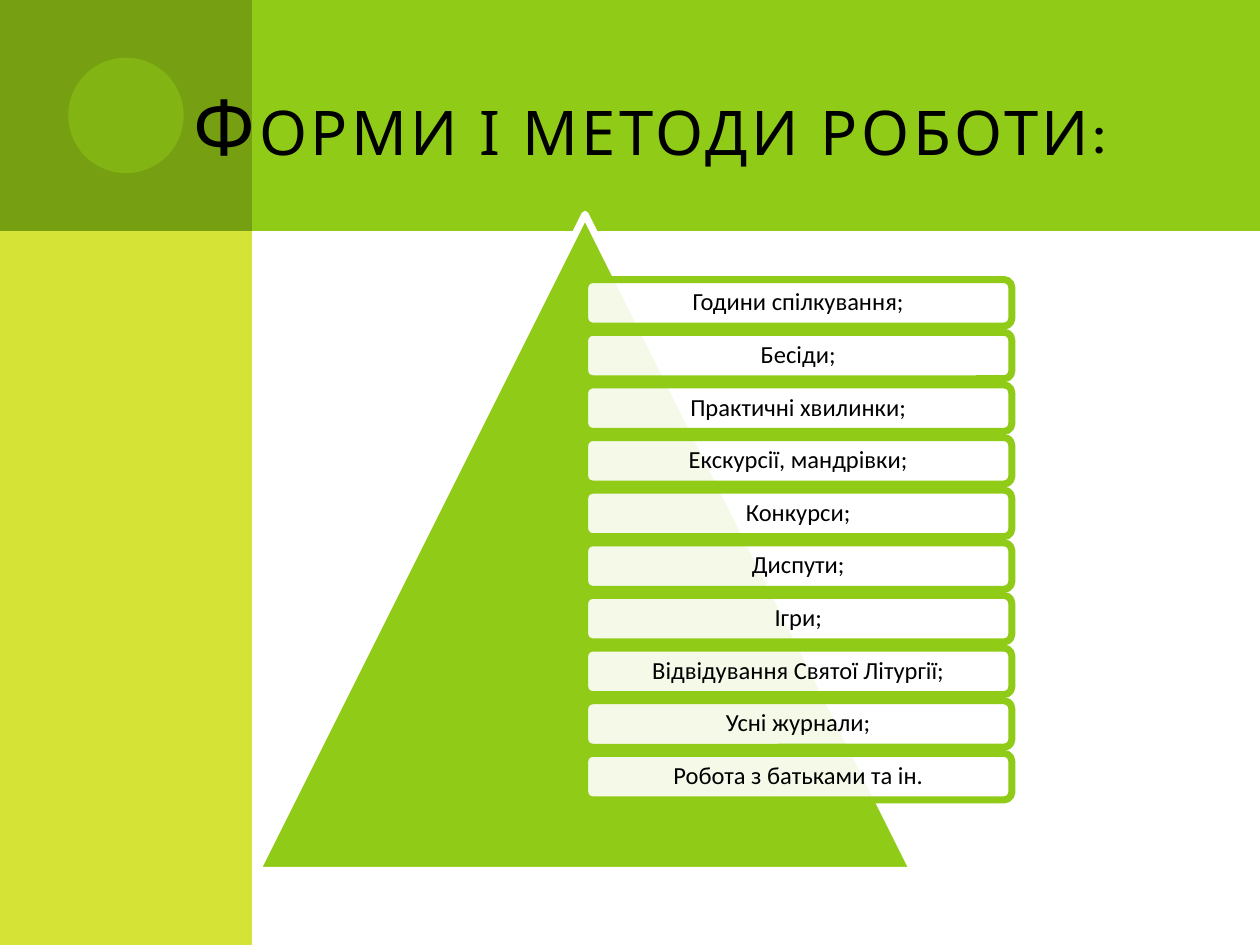
from dataclasses import dataclass

import lxml.etree
import pptx
import pptx.dml.color
import pptx.enum.shapes
import pptx.enum.text
import pptx.oxml.ns
import pptx.util

Pt = pptx.util.Pt
Shape = pptx.enum.shapes.MSO_SHAPE
Align = pptx.enum.text.PP_ALIGN


@dataclass(frozen=True)
class Theme:
    green: str = "8FCB17"
    dark_green: str = "769F11"
    lime: str = "D4E336"
    white: str = "FFFFFF"
    black: str = "000000"
    title_font: str = "Karla"
    body_font: str = "Calibri"
    title_size: int = 44
    body_size: int = 14
    outline: int = 4


THEME = Theme()
TITLE = "Форми і методи роботи:"
METHODS = [
    "Години спілкування;",
    "Бесіди;",
    "Практичні хвилинки;",
    "Екскурсії, мандрівки;",
    "Конкурси;",
    "Диспути;",
    "Ігри;",
    "Відвідування Святої Літургії;",
    "Усні журнали;",
    "Робота з батьками та ін.",
]
FIRST_METHOD_TOP = 159.8
METHOD_PITCH = 30.08


def rgb(color):
    return pptx.dml.color.RGBColor.from_string(color)


def add_child(parent, tag, **attributes):
    return lxml.etree.SubElement(parent, pptx.oxml.ns.qn(tag), **attributes)


def add_figure(page, kind, bounds, fill, opacity=100, line=None):
    figure = page.shapes.add_shape(kind, *map(Pt, bounds))
    figure.shadow.inherit = False
    figure.fill.solid()
    figure.fill.fore_color.rgb = rgb(fill)
    if opacity < 100:
        color = figure.fill._xPr.find(".//" + pptx.oxml.ns.qn("a:srgbClr"))
        add_child(color, "a:alpha", val=str(opacity * 1000))
    if line:
        figure.line.color.rgb = rgb(line)
        figure.line.width = Pt(THEME.outline)
        add_child(figure.line._get_or_add_ln(), "a:round")
    else:
        figure.line.fill.background()
    return figure


def write_text(shape, text, font, size, alignment):
    frame = shape.text_frame
    frame.word_wrap = True
    frame.vertical_anchor = pptx.enum.text.MSO_ANCHOR.MIDDLE
    para = frame.paragraphs[0]
    span = para.add_run()
    span.text = text
    para.alignment = alignment
    para.font.name = font
    para.font.size = Pt(size)
    para.font.color.rgb = rgb(THEME.black)
    return para


def add_background(page):
    add_figure(page, Shape.RECTANGLE, (36, 0, 684, 132), THEME.green)
    add_figure(page, Shape.RECTANGLE, (0, 0, 144, 540), THEME.lime)
    add_figure(page, Shape.RECTANGLE, (0, 0, 144, 132), THEME.dark_green)
    add_figure(page, Shape.OVAL, (39, 33, 66, 66), THEME.green, opacity=50)


def add_title(page):
    box = page.shapes.add_textbox(*map(Pt, (36, 37.5, 648, 67.5)))
    para = write_text(box, TITLE, THEME.title_font, THEME.title_size, Align.RIGHT)
    properties = para.runs[0].font._element
    properties.set("cap", "small")
    properties.set("spc", "200")


def add_method(page, text, top):
    bounds = (334.1, top, 244.1, 26.6)
    box = add_figure(page, Shape.ROUNDED_RECTANGLE, bounds, THEME.white, 90, THEME.green)
    frame = box.text_frame
    frame.margin_left = frame.margin_right = Pt(6)
    frame.margin_top = frame.margin_bottom = Pt(4)
    para = write_text(box, text, THEME.body_font, THEME.body_size, Align.CENTER)
    para.line_spacing = 0.9


def main():
    deck = pptx.Presentation()
    deck.slide_width, deck.slide_height = Pt(720), Pt(540)
    page = deck.slides.add_slide(deck.slide_layouts[6])
    add_background(page)
    add_title(page)
    add_figure(page, Shape.ISOSCELES_TRIANGLE, (146.8, 122.4, 375, 375),
               THEME.green, line=THEME.white)
    for index, text in enumerate(METHODS):
        add_method(page, text, FIRST_METHOD_TOP + index * METHOD_PITCH)
    deck.save("out.pptx")


if __name__ == "__main__":
    main()
